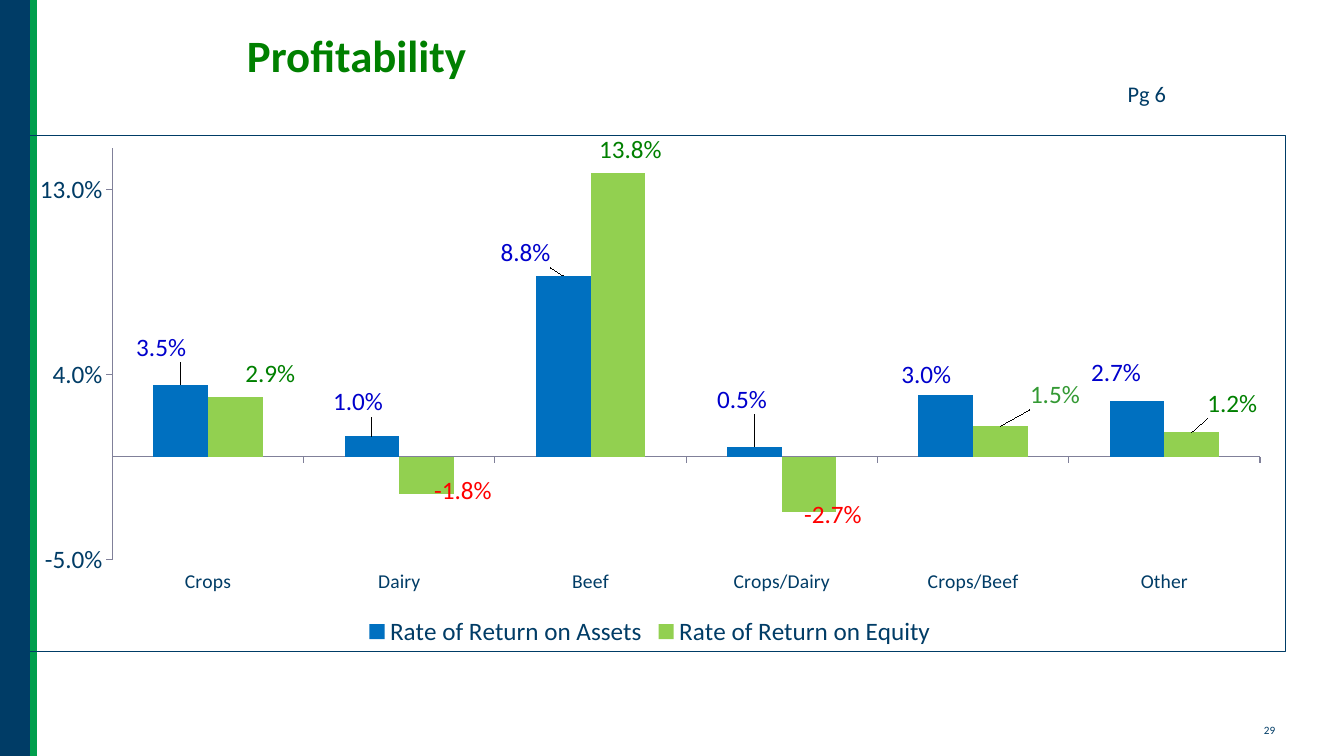
from lxml import etree
from pptx import Presentation
from pptx.chart.data import CategoryChartData
from pptx.dml.color import RGBColor
from pptx.enum import chart as ch, shapes, text
from pptx.oxml import parse_xml
from pptx.oxml.ns import nsdecls, qn
from pptx.util import Pt

NAVY, GREEN, FONT = "003C66", "008000", "Calibri"
KINDS = ["Crops", "Dairy", "Beef", "Crops/Dairy", "Crops/Beef", "Other"]
WIDE, HIGH = 908.6, 370  # chart size

# Name, bar colour, values, label colours, label shifts in points
RATES = [
    ("Rate of Return on Assets", "0070C0",
     [0.035, 0.01, 0.088, 0.005, 0.03, 0.027],
     ["0000CC"] * 6,
     [(-14, -13), (-10, -11), (-27, -3), (-9, -20), (-14, -1), (-15, -7)]),
    ("Rate of Return on Equity", "92D050",
     [0.029, -0.018, 0.138, -0.027, 0.015, 0.012],
     [GREEN, "FF0000", GREEN, "FF0000", "339933", GREEN],
     [(25, -3), (26, -16), (9, -3), (17, -12), (39, -9), (29, -7)]),
]


def rgb(code):
    return RGBColor.from_string(code)


def style(font, size, color=NAVY, bold=False):
    font.name, font.size, font.bold = FONT, Pt(size), bold
    font.color.rgb = rgb(color)


def layout(x, y, w=None, h=None):
    """Manual chart layout: a label shift, or a plot frame if sized."""
    tags = [("x", x), ("y", y)]
    if w:
        tags = [("layoutTarget", "inner"), ("xMode", "edge"),
                ("yMode", "edge"), *tags, ("w", w), ("h", h)]
    body = "".join(f'<c:{tag} val="{val}"/>' for tag, val in tags)
    return parse_xml(f'<c:layout {nsdecls("c")}><c:manualLayout>{body}'
                     '</c:manualLayout></c:layout>')


def write(frame, words, size, align, color=NAVY, bold=False):
    frame.text = words
    para = frame.paragraphs[0]
    para.alignment = align
    style(para.runs[0].font, size, color, bold)


def note(slide, words, box, size, align, wrap):
    frame = slide.shapes.add_textbox(*map(Pt, box)).text_frame
    frame.word_wrap = wrap
    write(frame, words, size, align)


def stripe(slide):
    bar = slide.shapes.add_shape(shapes.MSO_SHAPE.RECTANGLE,
                                 0, 0, Pt(24), Pt(540))
    bar.shadow.inherit = False
    bar.fill.solid()
    bar.fill.fore_color.rgb = rgb(NAVY)
    bar.line.fill.background()
    edge = slide.shapes.add_connector(shapes.MSO_CONNECTOR.STRAIGHT,
                                      Pt(24), 0, Pt(24), Pt(540))
    edge.line.color.rgb = rgb("009F4D")
    edge.line.width = Pt(4.5)
    etree.SubElement(edge._element.spPr, qn("a:effectLst"))


def title(slide, words):
    head = slide.shapes.title
    head.left, head.top, head.width, head.height = map(
        Pt, (131.8, 3, 246, 72))
    head.text_frame.vertical_anchor = text.MSO_ANCHOR.MIDDLE
    write(head.text_frame, words, 32, text.PP_ALIGN.CENTER, GREEN, True)


def axes(chart):
    cat, val = chart.category_axis, chart.value_axis
    cat.tick_label_position = ch.XL_TICK_LABEL_POSITION.LOW
    val.minimum_scale, val.maximum_scale = -0.05, 0.15
    val.major_unit = 0.09
    val.has_major_gridlines = False
    val.tick_labels.number_format = "0.0%"
    val.tick_labels.number_format_is_linked = False
    for axis, size in ((cat, 14), (val, 18)):
        axis.major_tick_mark = ch.XL_TICK_MARK.OUTSIDE
        axis.minor_tick_mark = ch.XL_TICK_MARK.NONE
        axis.format.line.color.rgb = rgb("808099")
        axis.format.line.width = Pt(0.75)
        style(axis.tick_labels.font, size)


def label(series, colors, shifts):
    tags = series.data_labels
    tags.show_value = True
    tags.number_format, tags.number_format_is_linked = "0.0%", False
    tags.position = ch.XL_LABEL_POSITION.OUTSIDE_END
    style(tags.font, 18, colors[0])
    for i, (color, (dx, dy)) in enumerate(zip(colors, shifts)):
        tag = series.points[i].data_label
        style(tag.font, 18, color)
        tag.position = ch.XL_LABEL_POSITION.OUTSIDE_END
    for item, (dx, dy) in zip(tags._element.findall(qn("c:dLbl")), shifts):
        item.insert(1, layout(round(dx / WIDE, 4), round(dy / HIGH, 4)))


def graph(slide):
    data = CategoryChartData(number_format="0.0%")
    data.categories = KINDS
    for name, _, vals, *_ in RATES:
        data.add_series(name, vals)
    chart = slide.shapes.add_chart(
        ch.XL_CHART_TYPE.COLUMN_CLUSTERED,
        Pt(10), Pt(96), Pt(WIDE), Pt(HIGH), data).chart
    style(chart.font, 18)
    chart.has_title = False
    chart.has_legend = True
    chart.legend.position = ch.XL_LEGEND_POSITION.BOTTOM
    chart.legend.include_in_layout = False
    style(chart.legend.font, 18)
    axes(chart)

    # Bars and their labels
    plot = chart.plots[0]
    plot.gap_width, plot.overlap, plot.vary_by_categories = 150, 0, False
    for series, (_, fill, _, colors, shifts) in zip(plot.series, RATES):
        series.invert_if_negative = False
        series.format.fill.solid()
        series.format.fill.fore_color.rgb = rgb(fill)
        label(series, colors, shifts)

    # Plot frame and outer border
    root = chart.element
    area = root.find(qn("c:chart")).find(qn("c:plotArea"))
    for old in area.findall(qn("c:layout")):
        area.remove(old)
    area.insert(0, layout(0.077, 0.025, 0.903, 0.797))
    root.find(qn("c:chart")).addnext(parse_xml(
        f'<c:spPr {nsdecls("c", "a")}><a:noFill/><a:ln w="9525"><a:solidFill>'
        f'<a:srgbClr val="{NAVY}"/></a:solidFill></a:ln></c:spPr>'))


def main():
    deck = Presentation()
    deck.slide_width, deck.slide_height = Pt(960), Pt(540)
    slide = deck.slides.add_slide(deck.slide_layouts[5])
    stripe(slide)
    graph(slide)
    title(slide, "Profitability")
    note(slide, "Pg 6", (756, 54, 84, 26.6), 16, text.PP_ALIGN.RIGHT, True)
    note(slide, "29", (895.7, 513.4, 24.5, 17), 8, text.PP_ALIGN.LEFT, False)
    deck.save("out.pptx")


if __name__ == "__main__":
    main()
